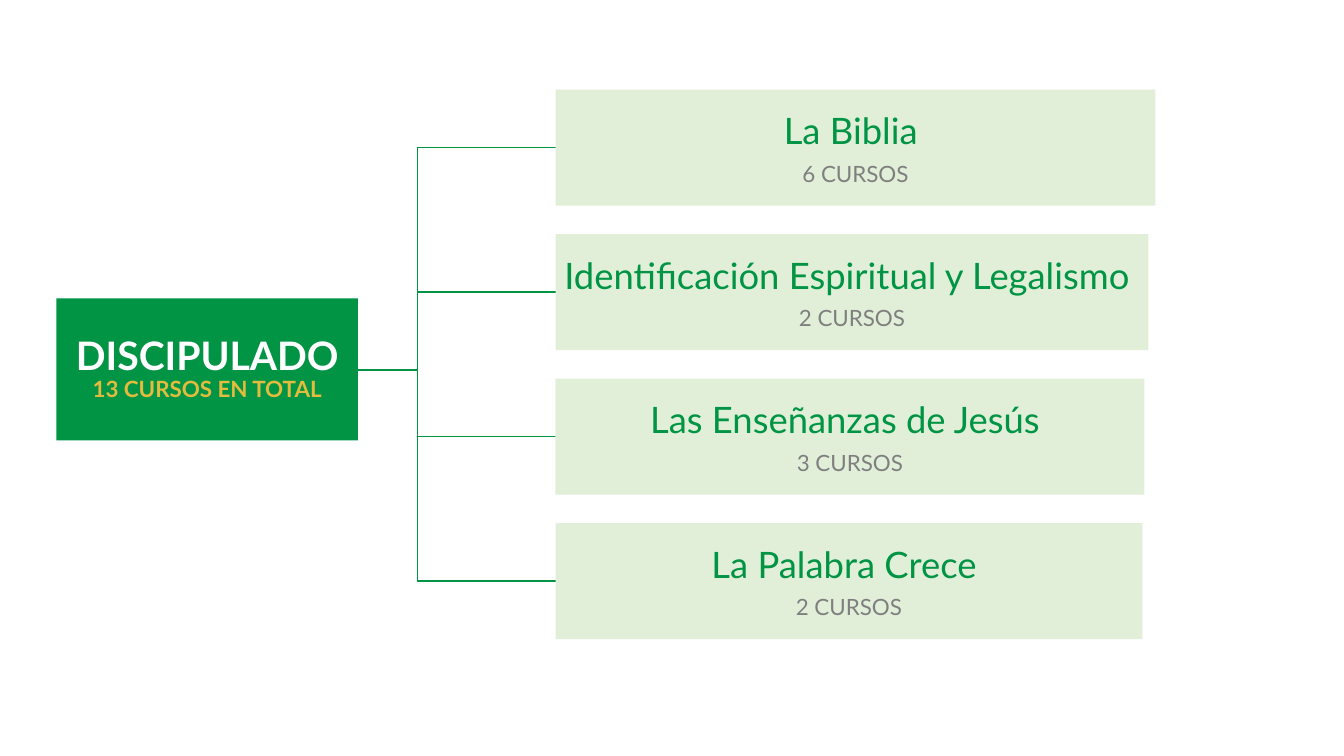
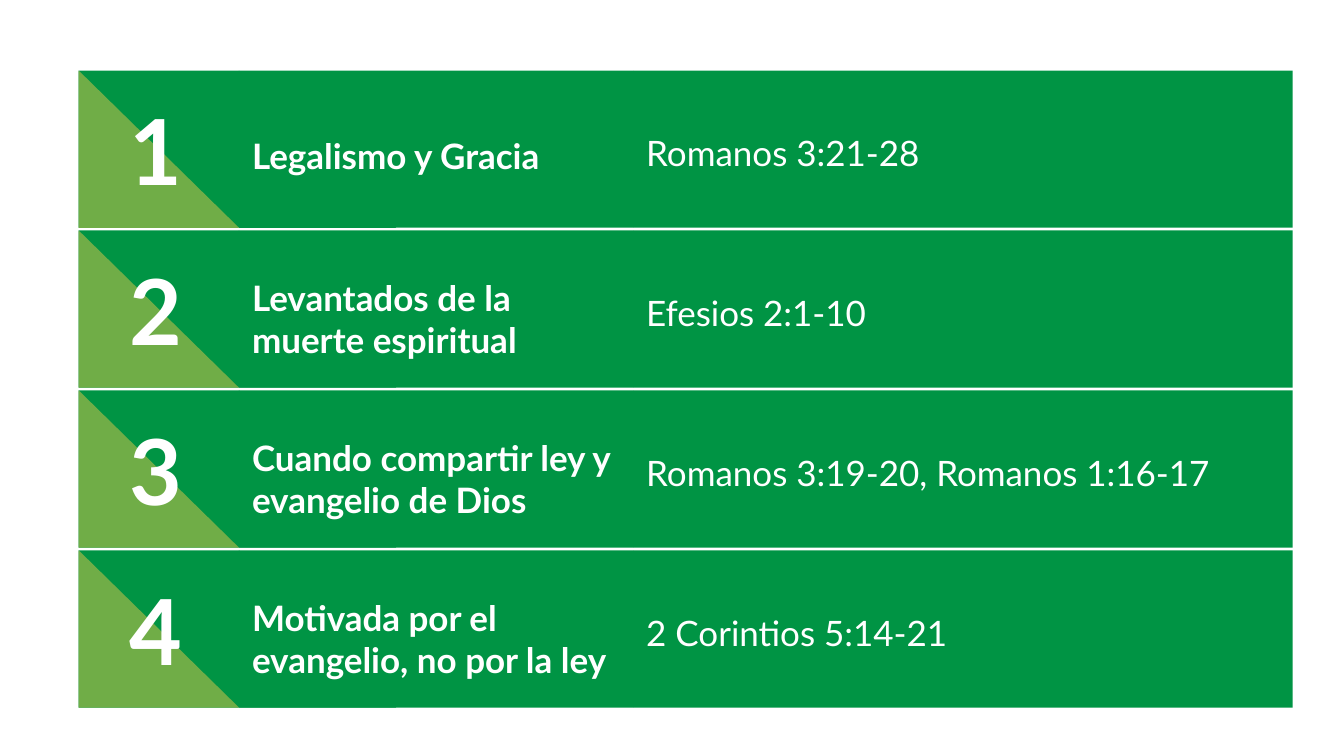
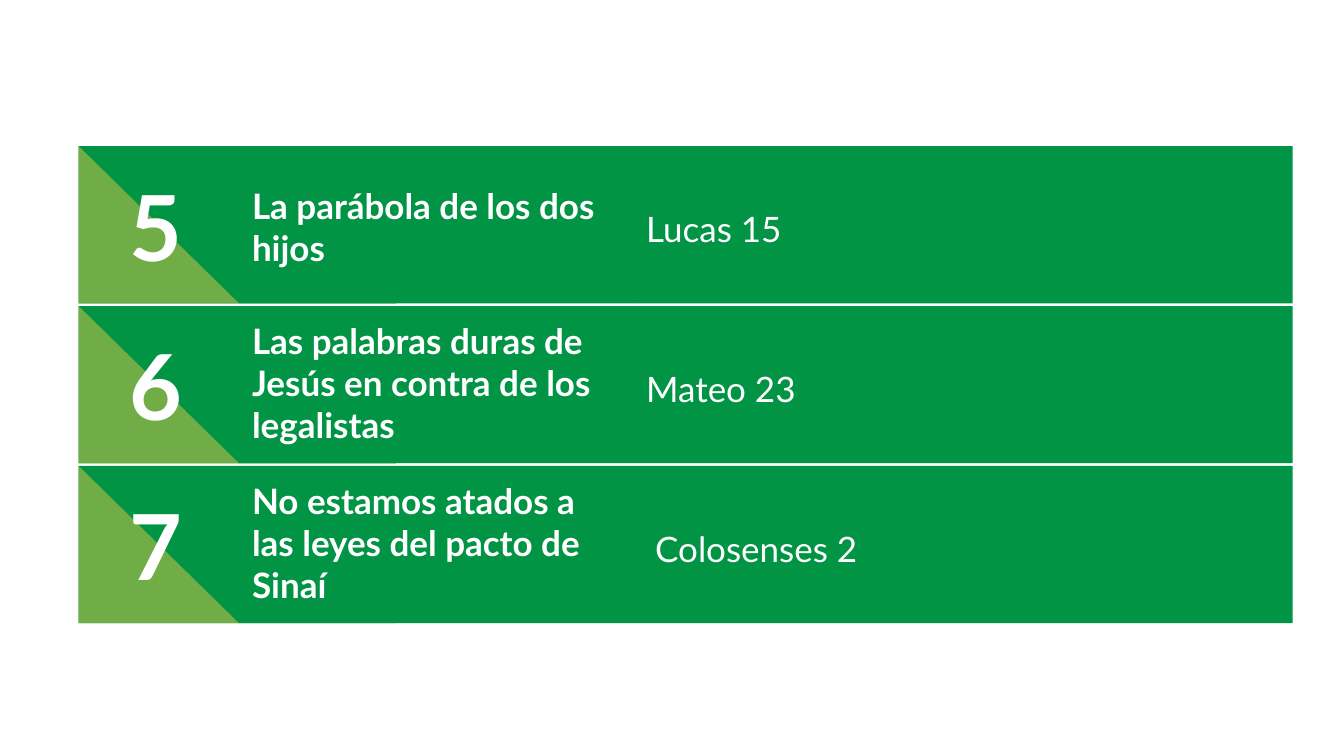
from pptx import Presentation
from pptx.dml.color import RGBColor
from pptx.enum import shapes, text
from pptx.oxml import ns
from pptx.util import Inches, Pt
from lxml import etree

# Shared style
GREEN = RGBColor(0x00, 0x94, 0x44)
LEAF = RGBColor(0x70, 0xAD, 0x47)
PALE = RGBColor(0xE1, 0xEF, 0xD8)
GOLD = RGBColor(0xE3, 0xBB, 0x3D)
GRAY = RGBColor(0x7F, 0x7F, 0x7F)
WHITE = RGBColor(0xFF, 0xFF, 0xFF)
FONT = "Lato"
RECTANGLE = shapes.MSO_SHAPE.RECTANGLE
TRIANGLE = shapes.MSO_SHAPE.RIGHT_TRIANGLE
LEFT, CENTER = text.PP_ALIGN.LEFT, text.PP_ALIGN.CENTER
TOP, MIDDLE, BOTTOM = (text.MSO_ANCHOR.TOP, text.MSO_ANCHOR.MIDDLE,
                       text.MSO_ANCHOR.BOTTOM)

# Course rows
ROW_LEFT, ROW_HEIGHT, ROW_PITCH = 0.78, 1.56, 4.76 / 3
NAME_LEFT, VERSE_LEFT, VERSE_WIDTH = 2.37, 6.28, 6.54
ROW_INSET, VERSE_DROP = 0.13, 0.61

# Tree of subjects
ROOT_LEFT, ROOT_TOP, ROOT_WIDTH, ROOT_HEIGHT = 0.56, 2.96, 2.99, 1.41
BRANCH_START, BRANCH_Y = 2.77, 3.67
BRANCH_LEFT, BRANCH_TOP, BRANCH_HEIGHT, BRANCH_PITCH = 5.51, 0.89, 1.15, 4.3 / 3
TREE_INSET = 0.02

# Subject, number of courses, box width
SUBJECTS = [
    ("La Biblia ", "6 CURSOS", 5.95),
    ("Identificación Espiritual y Legalismo ", "2 CURSOS", 5.88),
    ("Las Enseñanzas de Jesús ", "3 CURSOS", 5.84),
    ("La Palabra Crece ", "2 CURSOS", 5.82),
]

# Course name, its drop below the row's top, Bible passage
FIRST_COURSES = [
    ("Legalismo y Gracia", 0.5, "Romanos 3:21-28"),
    ("Levantados de la muerte espiritual", 0.33, "Efesios 2:1-10"),
    ("Cuando compartir ley y evangelio de Dios", 0.33,
     "Romanos 3:19-20, Romanos 1:16-17"),
    ("Motivada por el evangelio, no por la ley", 0.33, "2 Corintios 5:14-21"),
]
LAST_COURSES = [
    ("La parábola de los dos hijos", 0.25, "Lucas 15"),
    ("Las palabras duras de Jesús en contra de los legalistas", 0, "Mateo 23"),
    ("No estamos atados a las leyes del pacto de Sinaí", 0, " Colosenses 2"),
]


def add_block(slide, kind, left, top, width, height, color):
    shape = slide.shapes.add_shape(
        kind, Inches(left), Inches(top), Inches(width), Inches(height))
    shape.shadow.inherit = False
    shape.fill.solid()
    shape.fill.fore_color.rgb = color
    shape.line.fill.background()
    return shape


def set_frame(shape, inset, anchor=TOP, top_inset=None):
    frame = shape.text_frame
    frame.word_wrap = True
    frame.vertical_anchor = anchor
    frame.margin_left = frame.margin_right = frame.margin_bottom = Inches(inset)
    frame.margin_top = Inches(inset if top_inset is None else top_inset)


def add_text(shape, content, size=25, color=WHITE, bold=False, align=LEFT,
             spacing=1.0, before=0):
    """Write a paragraph after any text the shape already holds."""
    frame = shape.text_frame
    paragraph = frame.add_paragraph() if frame.text else frame.paragraphs[0]
    paragraph.alignment = align
    paragraph.line_spacing = spacing
    paragraph.space_before = Pt(before)
    run = paragraph.add_run()
    run.text = content
    run.font.name = FONT
    run.font.size = Pt(size)
    run.font.bold = bold
    run.font.color.rgb = color


def add_label(slide, content, left, top, width, height, anchor=TOP, **style):
    box = slide.shapes.add_textbox(
        Inches(left), Inches(top), Inches(width), Inches(height))
    set_frame(box, ROW_INSET, anchor)
    add_text(box, content, bold=True, **style)


def add_branch(slide, y):
    connector = slide.shapes.add_connector(
        shapes.MSO_CONNECTOR.ELBOW, Inches(BRANCH_START), Inches(BRANCH_Y),
        Inches(BRANCH_LEFT), Inches(y))
    connector.line.color.rgb = GREEN
    connector.line.width = Pt(1)
    etree.SubElement(connector._element.spPr, ns.qn("a:effectLst"))


def add_tree(slide):
    tops = [BRANCH_TOP + BRANCH_PITCH * i for i in range(len(SUBJECTS))]
    # Branches lie behind the boxes
    for top in tops:
        add_branch(slide, top + BRANCH_HEIGHT / 2)

    root = add_block(slide, RECTANGLE, ROOT_LEFT, ROOT_TOP, ROOT_WIDTH,
                     ROOT_HEIGHT, GREEN)
    set_frame(root, TREE_INSET, MIDDLE)
    add_text(root, "DISCIPULADO", size=28, bold=True, align=CENTER, spacing=0.9)
    add_text(root, "13 CURSOS EN TOTAL", size=16, color=GOLD, bold=True,
             align=CENTER, spacing=0.9)

    for top, (subject, count, width) in zip(tops, SUBJECTS):
        box = add_block(slide, RECTANGLE, BRANCH_LEFT, top, width,
                        BRANCH_HEIGHT, PALE)
        set_frame(box, TREE_INSET, MIDDLE)
        add_text(box, subject, size=26, color=GREEN, align=CENTER)
        add_text(box, count, size=16, color=GRAY, align=CENTER, spacing=0.9,
                 before=8)


def add_course(slide, number, top, name, name_drop, passage):
    verse = add_block(slide, RECTANGLE, VERSE_LEFT, top, VERSE_WIDTH,
                      ROW_HEIGHT, GREEN)
    set_frame(verse, ROW_INSET, top_inset=VERSE_DROP)
    add_text(verse, passage)

    name_width = VERSE_LEFT - NAME_LEFT
    add_block(slide, RECTANGLE, ROW_LEFT, top, VERSE_LEFT - ROW_LEFT,
              ROW_HEIGHT, GREEN)
    add_block(slide, TRIANGLE, NAME_LEFT, top, ROW_HEIGHT, ROW_HEIGHT, GREEN)
    add_block(slide, TRIANGLE, ROW_LEFT, top, NAME_LEFT - ROW_LEFT, ROW_HEIGHT,
              LEAF)
    add_label(slide, str(number), 1.06, top + 0.5, 0.98, 0.95, anchor=BOTTOM,
              size=65, align=CENTER)
    add_label(slide, name, NAME_LEFT, top + name_drop, name_width, 0.95)


def add_courses(slide, courses, first_number, first_top):
    for i, course in enumerate(courses):
        add_course(slide, first_number + i, first_top + ROW_PITCH * i, *course)


def main():
    presentation = Presentation()
    presentation.slide_width = Inches(13.33)
    presentation.slide_height = Inches(7.5)
    blank = presentation.slide_layouts[6]

    add_tree(presentation.slides.add_slide(blank))
    add_courses(presentation.slides.add_slide(blank), FIRST_COURSES, 1, 0.7)
    add_courses(presentation.slides.add_slide(blank), LAST_COURSES,
                len(FIRST_COURSES) + 1, 1.45)
    presentation.save("out.pptx")


if __name__ == "__main__":
    main()
